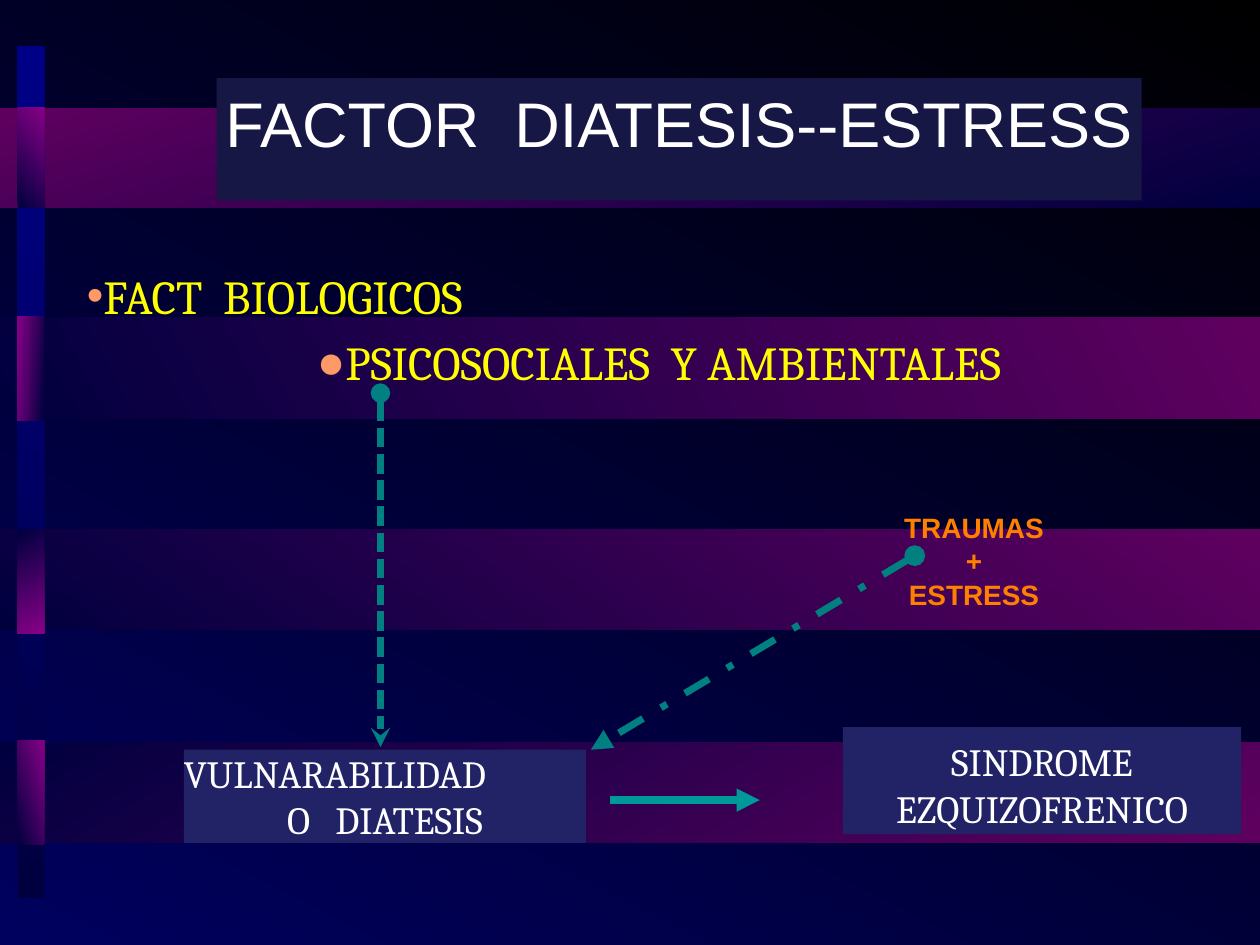
from pptx import Presentation
from pptx.dml.color import RGBColor
from pptx.enum.dml import MSO_LINE
from pptx.enum.shapes import MSO_CONNECTOR, MSO_SHAPE
from pptx.enum.text import MSO_ANCHOR, MSO_AUTO_SIZE, PP_ALIGN
from pptx.oxml.ns import qn
from pptx.util import Inches, Pt
from lxml.etree import SubElement

LEFT, CENTER = PP_ALIGN.LEFT, PP_ALIGN.CENTER
rgb = RGBColor.from_string


def set_gradient(fill, start, end, angle):
    fill.gradient()
    fill.gradient_angle = 360 - angle
    for stop, position, color in zip(fill.gradient_stops, (0, 1), (start, end)):
        stop.position = position
        stop.color.rgb = rgb(color)


def set_text(sp, lines, font, size, color, bold=False, top=0):
    tf = sp.text_frame
    frame = {"word_wrap": True, "auto_size": MSO_AUTO_SIZE.NONE,
             "vertical_anchor": MSO_ANCHOR.TOP, "margin_left": 0,
             "margin_right": 0, "margin_bottom": 0, "margin_top": Inches(top)}
    for name, value in frame.items():
        setattr(tf, name, value)
    for i, (text, align) in enumerate(lines):
        p = tf.add_paragraph() if i else tf.paragraphs[0]
        p.alignment = align
        r = p.add_run()
        r.text = text
        for name, value in {"name": font, "size": Pt(size), "bold": bold}.items():
            setattr(r.font, name, value)
        r.font.color.rgb = rgb(color)


prs = Presentation()
prs.slide_width, prs.slide_height = Inches(10), Inches(7.5)
s = prs.slides.add_slide(prs.slide_layouts[1])
title, body = s.placeholders
set_gradient(s.background.fill, "00005F", "000000", 297)

# Side strip, then each horizontal band with its crossing on the strip
bands = [(0.14, 0.37, 0.21, 6.76, "000087", 297)]
for band_top, band_h, band_angle, cross_top, cross_h, cross_angle in (
        (0.86, 0.79, 253, 0.85, 0.8, 320),
        (2.52, 0.8, 332, 2.51, 0.83, 184),
        (4.2, 0.8, 305, 4.2, 0.83, 63),
        (5.89, 0.8, 60, 5.88, 0.82, 343)):
    bands.append((0, band_top, 10, band_h, "5F005F", band_angle))
    bands.append((0.14, cross_top, 0.21, cross_h, "870087", cross_angle))
for x, y, w, h, color, angle in bands:
    sp = s.shapes.add_shape(MSO_SHAPE.RECTANGLE, Inches(x), Inches(y), Inches(w), Inches(h))
    sp.shadow.inherit = False
    sp.line.fill.background()
    set_gradient(sp.fill, "00003F", color, angle)

# Title and list, brought in front of the bands
for sp, box in ((title, (1.72, 0.62, 7.34, 0.97)), (body, (0.69, 2.12, 9.08, 1))):
    sp.left, sp.top, sp.width, sp.height = map(Inches, box)
    sp.element.getparent().append(sp.element)
title.fill.solid()
title.fill.fore_color.rgb = rgb("171745")
set_text(title, [("FACTOR  DIATESIS--ESTRESS", CENTER)], "Arial", 36, "FFFFFF", top=0.05)
set_text(body, [("FACT  BIOLOGICOS", LEFT), ("PSICOSOCIALES  Y AMBIENTALES", CENTER)],
         "Cambria", 27, "FFFF00")
for p, bullet in zip(body.text_frame.paragraphs, "•●"):
    p.space_before = Pt(5.4)
    pPr = p._p.get_or_add_pPr()
    pPr.set("marL", "0")
    pPr.set("indent", "0")
    SubElement(SubElement(pPr, qn("a:buClr")), qn("a:srgbClr"), val="FF9966")
    SubElement(pPr, qn("a:buFont"), typeface="Arial")
    SubElement(pPr, qn("a:buChar"), char=bullet)

# Filled boxes
for box, lines, top in (
        ((1.46, 5.95, 3.19, 0.74), [("VULNARABILIDAD", LEFT), ("O   DIATESIS", CENTER)], 0),
        ((6.69, 5.77, 3.16, 0.85), [("SINDROME", CENTER), ("EZQUIZOFRENICO", CENTER)], 0.09)):
    sp = s.shapes.add_shape(MSO_SHAPE.RECTANGLE, *map(Inches, box))
    sp.shadow.inherit = False
    sp.line.fill.background()
    sp.fill.solid()
    sp.fill.fore_color.rgb = rgb("222267")
    set_text(sp, lines, "Cambria", 22, "FFFFFF", top=top)

# Trauma label
sp = s.shapes.add_textbox(Inches(6.22), Inches(4.05), Inches(3.02), Inches(0.81))
set_text(sp, [(text, CENTER) for text in ("TRAUMAS", "+", "ESTRESS")],
         "Arial", 16, "FF8000", bold=True)

# Arrows
for ends, color, width, dash, head, tail in (
        ((4.84, 6.35, 6.03, 6.35), "009999", 4.39, MSO_LINE.SOLID, "none", "triangle"),
        ((3.02, 3.12, 3.02, 5.93), "008080", 3.73, MSO_LINE.SQUARE_DOT, "oval", "stealth"),
        ((7.26, 4.41, 4.69, 5.95), "008080", 4, MSO_LINE.DASH_DOT, "oval", "triangle")):
    arrow = s.shapes.add_connector(MSO_CONNECTOR.STRAIGHT, *map(Inches, ends))
    arrow.line.color.rgb = rgb(color)
    arrow.line.width = Pt(width)
    arrow.line.dash_style = dash
    ln = arrow.line._get_or_add_ln()
    SubElement(ln, qn("a:headEnd"), type=head)
    SubElement(ln, qn("a:tailEnd"), type=tail)
    SubElement(arrow.element.spPr, qn("a:effectLst"))

prs.save("out.pptx")
